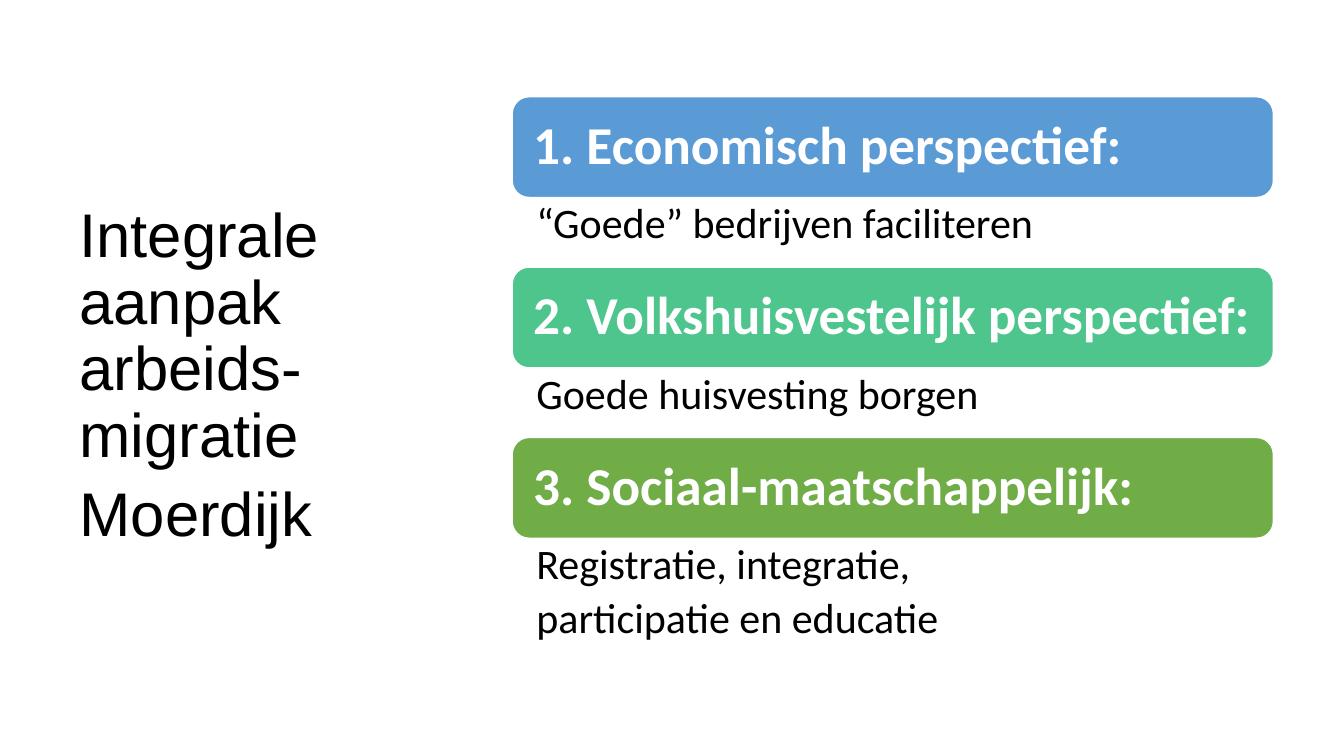
from dataclasses import dataclass

from pptx import Presentation
from pptx.dml.color import RGBColor
from pptx.enum.shapes import MSO_SHAPE as Shape
from pptx.enum.text import MSO_ANCHOR as Anchor, PP_ALIGN as Align
from pptx.slide import Slide
from pptx.text.text import TextFrame, _Paragraph as Paragraph
from pptx.util import Emu, Pt

EMU_PER_PX = 9144
WHITE = RGBColor(0xFF, 0xFF, 0xFF)
BLACK = RGBColor(0x00, 0x00, 0x00)
BLUE = RGBColor(0x5B, 0x9B, 0xD5)
TEAL = RGBColor(0x4D, 0xC5, 0x8D)
GREEN = RGBColor(0x70, 0xAD, 0x47)

LEFT, TOP, WIDTH = 508, 96, 755
HEADING_HEIGHT, LINE_HEIGHT = 100, 69


@dataclass(frozen=True)
class Perspective:
    heading: str
    lines: tuple[str, ...]
    color: RGBColor


PERSPECTIVES = (
    Perspective("1. Economisch perspectief:", ("“Goede” bedrijven faciliteren",), BLUE),
    Perspective("2. Volkshuisvestelijk perspectief:", ("Goede huisvesting borgen",), TEAL),
    Perspective(
        "3. Sociaal-maatschappelijk:",
        ("Registratie, integratie,", "participatie en educatie"),
        GREEN,
    ),
)


def px(length: int) -> Emu:
    """Turn px into EMU."""
    return Emu(length * EMU_PER_PX)


def set_frame(tf: TextFrame, anchor: Anchor, left: int, top: int, right: int) -> None:
    """Set wrapping, anchor and insets of a text frame."""
    tf.word_wrap = True
    tf.vertical_anchor = anchor
    tf.margin_left, tf.margin_right = px(left), px(right)
    tf.margin_top = tf.margin_bottom = px(top)


def style(p: Paragraph, font: str, size: int, color: RGBColor, bold: bool = False) -> None:
    """Set the alignment, spacing and font of a paragraph."""
    p.alignment = Align.LEFT
    p.line_spacing = 0.9
    p.font.name, p.font.size, p.font.bold = font, Pt(size), bold
    p.font.color.rgb = color


def add_title(s: Slide) -> None:
    """Add the title on the left."""
    tf = s.shapes.add_textbox(px(69), px(70), px(387), px(611)).text_frame
    set_frame(tf, Anchor.MIDDLE, 10, 5, 10)
    p = tf.paragraphs[0]
    p.text = "Integrale\vaanpak\varbeids-migratie\vMoerdijk"
    style(p, "Arial", 44, BLACK)
    r = p.add_run()
    r.text = " "
    r.font.name, r.font.size = "Calibri", Pt(54)


def add_heading(s: Slide, item: Perspective, top: int) -> None:
    """Add the coloured heading bar of a perspective."""
    sp = s.shapes.add_shape(
        Shape.ROUNDED_RECTANGLE, px(LEFT), px(top), px(WIDTH), px(HEADING_HEIGHT)
    )
    sp.shadow.inherit = False
    sp.fill.solid()
    sp.fill.fore_color.rgb = item.color
    sp.line.color.rgb = WHITE
    sp.line.width = Pt(1)
    set_frame(sp.text_frame, Anchor.MIDDLE, 16, 16, 10)
    p = sp.text_frame.paragraphs[0]
    p.text = item.heading
    style(p, "Calibri", 38, WHITE, bold=True)


def add_body(s: Slide, item: Perspective, top: int, height: int) -> None:
    """Add the lines below a heading."""
    tf = s.shapes.add_textbox(px(LEFT), px(top), px(WIDTH), px(height)).text_frame
    set_frame(tf, Anchor.TOP, 24, 5, 30)
    tf.text = "\n".join(item.lines)
    for p in tf.paragraphs:
        style(p, "Calibri", 30, BLACK)
        p.space_after = Pt(6)


def main() -> None:
    """Build and save the slide."""
    prs = Presentation()
    prs.slide_width, prs.slide_height = px(1333), px(750)
    s = prs.slides.add_slide(prs.slide_layouts[6])
    add_title(s)
    top = TOP
    for item in PERSPECTIVES:
        height = LINE_HEIGHT + 45 * (len(item.lines) - 1)
        add_heading(s, item, top)
        add_body(s, item, top + HEADING_HEIGHT, height)
        top += HEADING_HEIGHT + height
    prs.save("out.pptx")


if __name__ == "__main__":
    main()
